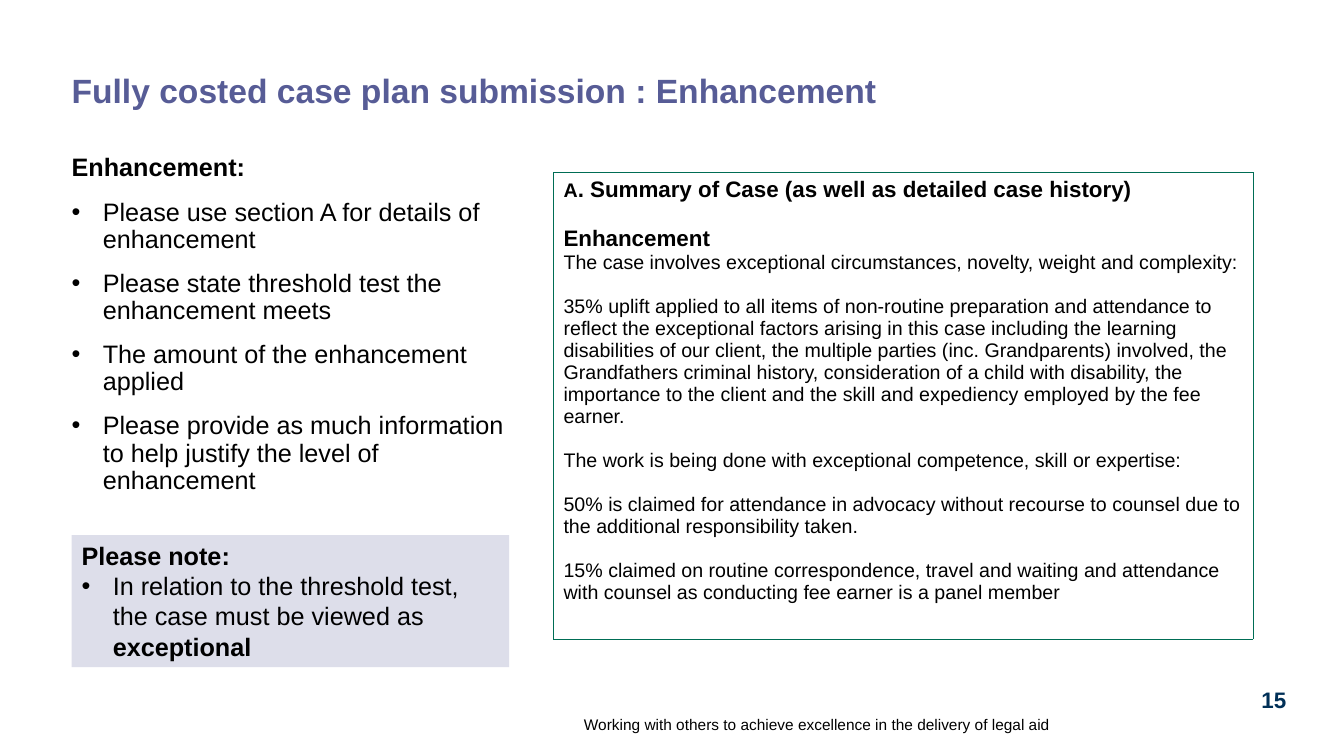
from dataclasses import dataclass

from lxml import etree
from pptx import Presentation
from pptx.dml.color import RGBColor
from pptx.enum.shapes import MSO_SHAPE
from pptx.enum.text import MSO_ANCHOR, MSO_AUTO_SIZE, PP_ALIGN
from pptx.oxml.ns import qn
from pptx.util import Inches, Pt

RECTANGLE = MSO_SHAPE.RECTANGLE
TOP, BOTTOM = MSO_ANCHOR.TOP, MSO_ANCHOR.BOTTOM
LEFT, CENTER, RIGHT = PP_ALIGN.LEFT, PP_ALIGN.CENTER, PP_ALIGN.RIGHT
NO_FIT, GROW = MSO_AUTO_SIZE.NONE, MSO_AUTO_SIZE.SHAPE_TO_FIT_TEXT

WIDTH, HEIGHT = Inches(13.33), Inches(7.5)
COLUMN, ROW = WIDTH / 100, HEIGHT / 100


@dataclass(frozen=True)
class Theme:
    font: str = "Arial"
    heading: str = "575C96"
    body: str = "000000"
    note: str = "DDDEEA"
    border: str = "006D55"
    number: str = "003057"
    title_size: float = 24
    body_size: float = 18
    summary_size: float = 16
    detail_size: float = 14
    footer_size: float = 11
    border_width: float = 0.5
    indent: float = 0.31


THEME = Theme()


@dataclass(frozen=True)
class Box:
    column: float
    row: float
    columns: float
    rows: float

    def place(self):
        return (round(self.column * COLUMN), round(self.row * ROW),
                round(self.columns * COLUMN), round(self.rows * ROW))


def apply(target, formats):
    for attribute, value in formats.items():
        setattr(target, attribute, value)


def add_bullet(paragraph):
    properties = paragraph._p.get_or_add_pPr()
    indent = Inches(THEME.indent)
    properties.set("marL", str(indent))
    properties.set("indent", str(-indent))
    etree.SubElement(properties, qn("a:buFont")).set("typeface", THEME.font)
    etree.SubElement(properties, qn("a:buChar")).set("char", "•")


def write(frame, paragraphs, color=THEME.body):
    for index, (runs, bulleted, formats) in enumerate(paragraphs):
        paragraph = frame.paragraphs[0] if index == 0 else frame.add_paragraph()
        if bulleted:
            add_bullet(paragraph)
        apply(paragraph, formats)
        for text, size, bold in runs:
            run = paragraph.add_run()
            run.text = text
            apply(run.font, {"name": THEME.font, "size": Pt(size), "bold": bold})
            run.font.color.rgb = RGBColor.from_string(color)


def add_text(slide, box, paragraphs, color=THEME.body, anchor=TOP, right=0):
    frame = slide.shapes.add_textbox(*box.place()).text_frame
    apply(frame, {"word_wrap": True, "auto_size": NO_FIT,
                  "vertical_anchor": anchor, "margin_left": 0, "margin_top": 0,
                  "margin_right": round(right * COLUMN), "margin_bottom": 0})
    write(frame, paragraphs, color)


def add_title(slide, box, text):
    runs = [(text, THEME.title_size, True)]
    add_text(slide, box, [(runs, False, {"line_spacing": 0.9})], THEME.heading)


def add_guidance(slide, box, heading, points):
    first = {"line_spacing": 0.9, "space_after": Pt(6)}
    following = {**first, "space_before": Pt(6)}
    paragraphs = [([(heading, THEME.body_size, True)], False, first)]
    paragraphs += [([(point, THEME.body_size, False)], True, following)
                   for point in points]
    add_text(slide, box, paragraphs)


def add_note(slide, box, heading, point, emphasis):
    panel = slide.shapes.add_shape(RECTANGLE, *box.place())
    panel.shadow.inherit = False
    panel.fill.solid()
    panel.fill.fore_color.rgb = RGBColor.from_string(THEME.note)
    panel.line.fill.background()
    apply(panel.text_frame, {"word_wrap": True, "auto_size": GROW,
                             "vertical_anchor": TOP})
    size, aligned = THEME.body_size, {"alignment": LEFT}
    write(panel.text_frame, [
        ([(heading, size, True)], False, aligned),
        ([(point, size, False), (emphasis, size, True)], True, aligned),
    ])


def add_borders(cell):
    properties = cell._tc.get_or_add_tcPr()
    for index, side in enumerate(("lnL", "lnR", "lnT", "lnB")):
        edge = etree.Element(qn(f"a:{side}"), w=str(Pt(THEME.border_width)))
        fill = etree.SubElement(edge, qn("a:solidFill"))
        etree.SubElement(fill, qn("a:srgbClr")).set("val", THEME.border)
        properties.insert(index, edge)


def add_case_summary(slide, box, letter, heading, subheading, opening, details):
    table = slide.shapes.add_table(1, 1, *box.place()).table
    apply(table, {"first_row": False, "horz_banding": False})
    cell = table.cell(0, 0)
    cell.fill.background()
    add_borders(cell)
    large, small = THEME.summary_size, THEME.detail_size
    paragraphs = [
        ([(letter, small, True), (heading, large, True)], False, {}),
        ([(subheading, large, True)], False, {"space_before": Pt(17.5)}),
        ([(opening, small, False)], False, {}),
    ]
    paragraphs += [([(detail, small, False)], False, {"space_before": Pt(15.7)})
                   for detail in details]
    write(cell.text_frame, paragraphs)


def add_footer(slide, motto_box, number_box, motto, number):
    add_text(slide, motto_box,
             [([(motto, THEME.footer_size, False)], False, {"alignment": RIGHT})],
             anchor=BOTTOM, right=0.7)
    add_text(slide, number_box,
             [([(number, THEME.summary_size, True)], False, {"alignment": CENTER})],
             THEME.number)


def add_enhancement_slide(deck):
    slide = deck.slides.add_slide(deck.slide_layouts[6])
    margin, side_columns = 5.33, 32.56
    add_title(slide, Box(margin, 9.87, 90.32, 5.07),
              "Fully costed case plan submission : Enhancement")
    add_guidance(slide, Box(margin, 20.53, side_columns, 48.53), "Enhancement:", [
        "Please use section A for details of enhancement",
        "Please state threshold test the enhancement meets",
        "The amount of the enhancement applied",
        "Please provide as much information to help justify the level of enhancement",
    ])
    add_note(slide, Box(margin, 70.8, side_columns, 17.47), "Please note:",
             "In relation to the threshold test, the case must be viewed as ",
             "exceptional")
    add_case_summary(
        slide, Box(41.18, 22.8, 52.06, 61.73),
        "A", ". Summary of Case (as well as detailed case history)", "Enhancement",
        "The case involves exceptional circumstances, novelty, weight and complexity:",
        [
            "35% uplift applied to all items of non-routine preparation and "
            "attendance to reflect the exceptional factors arising in this case "
            "including the learning disabilities of our client, the multiple "
            "parties (inc. Grandparents) involved, the Grandfathers criminal "
            "history, consideration of a child with disability, the importance to "
            "the client and the skill and expediency employed by the fee earner.",
            "The work is being done with exceptional competence, skill or expertise:",
            "50% is claimed for attendance in advocacy without recourse to counsel "
            "due to the additional responsibility taken.",
            "15% claimed on routine correspondence, travel and waiting and "
            "attendance with counsel as conducting fee earner is a panel member",
        ])
    add_footer(slide, Box(4.28, 92.27, 74.57, 4.8), Box(93.32, 90.8, 2.93, 3.73),
               "Working with others to achieve excellence in the delivery of legal aid",
               "15")


def main():
    deck = Presentation()
    apply(deck, {"slide_width": WIDTH, "slide_height": HEIGHT})
    add_enhancement_slide(deck)
    deck.save("out.pptx")


if __name__ == "__main__":
    main()
